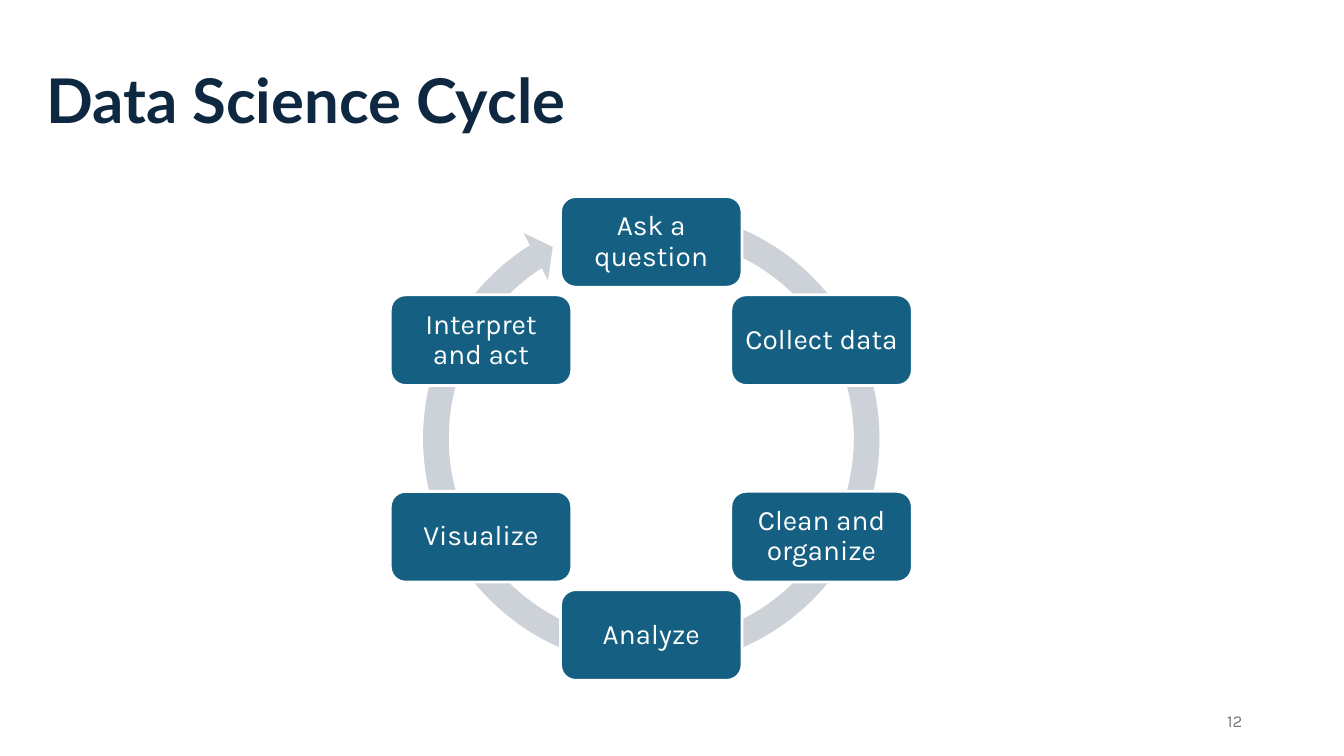
from math import cos, radians, sin

from pptx import Presentation
from pptx.dml.color import RGBColor
from pptx.enum.shapes import MSO_SHAPE as Shape
from pptx.enum.text import MSO_ANCHOR as Anchor, PP_ALIGN as Align
from pptx.util import Inches, Pt

NAVY, BLUE, RING_GREY, PAGE_GREY, WHITE = "0E2841", "156082", "CCD2D8", "797979", "FFFFFF"
STEPS = ["Ask a question", "Collect data", "Clean and organize",
         "Analyze", "Visualize", "Interpret and act"]
STEP_WIDTH, STEP_HEIGHT = 1.8, 0.9
RING_ADJUSTMENTS = [0.053, 3.126, 142.543, 171.117, 0.055]


def color(hex_string):
    return RGBColor.from_string(hex_string)


def write(frame, text, font_name, size, hex_string, align=Align.LEFT, bold=False, spacing=1.0):
    """Fill a text frame with one vertically centred paragraph."""
    frame.word_wrap = True
    frame.vertical_anchor = Anchor.MIDDLE
    paragraph = frame.paragraphs[0]
    paragraph.text = text
    paragraph.alignment = align
    paragraph.line_spacing = spacing
    font = paragraph.font
    font.name, font.size, font.bold = font_name, Pt(size), bold
    font.color.rgb = color(hex_string)


def add_label(slide, box, *args, **kwargs):
    label = slide.shapes.add_textbox(*map(Inches, box))
    write(label.text_frame, *args, **kwargs)


def add_filled(slide, preset, box, fill):
    filled = slide.shapes.add_shape(preset, *map(Inches, box))
    filled.shadow.inherit = False
    filled.fill.solid()
    filled.fill.fore_color.rgb = color(fill)
    return filled


def add_step(slide, box, text):
    step = add_filled(slide, Shape.ROUNDED_RECTANGLE, box, BLUE)
    step.line.color.rgb = color(WHITE)
    step.line.width = Pt(2)
    frame = step.text_frame
    frame.margin_left = frame.margin_right = Inches(0.08)
    frame.margin_top = frame.margin_bottom = Inches(0.08)
    write(frame, text, "Karla", 20, WHITE, Align.CENTER, spacing=0.9)


def add_cycle(slide, left, top, size):
    """Draw the arrow ring in a square and space the steps clockwise from its top."""
    ring = add_filled(slide, Shape.CIRCULAR_ARROW, (left, top, size, size), RING_GREY)
    ring.line.fill.background()
    for index, value in enumerate(RING_ADJUSTMENTS):
        ring.adjustments[index] = value

    radius = (size - STEP_HEIGHT) / 2
    for index, text in enumerate(STEPS):
        angle = radians(index * 360 / len(STEPS))
        center_x = left + size / 2 + radius * sin(angle)
        center_y = top + size / 2 - radius * cos(angle)
        add_step(slide, (center_x - STEP_WIDTH / 2, center_y - STEP_HEIGHT / 2,
                         STEP_WIDTH, STEP_HEIGHT), text)


def main():
    deck = Presentation()
    deck.slide_width, deck.slide_height = Inches(13.33), Inches(7.5)
    slide = deck.slides.add_slide(deck.slide_layouts[6])
    add_label(slide, (0.36, 0.3, 10.86, 1.45), "Data Science Cycle", "Lato", 44, NAVY,
              bold=True, spacing=0.9)
    add_label(slide, (9.42, 6.95, 3, 0.4), "12", "Karla", 12, PAGE_GREY, Align.RIGHT)
    add_cycle(slide, 4.06, 1.95, 4.8)
    deck.save("out.pptx")


if __name__ == "__main__":
    main()
